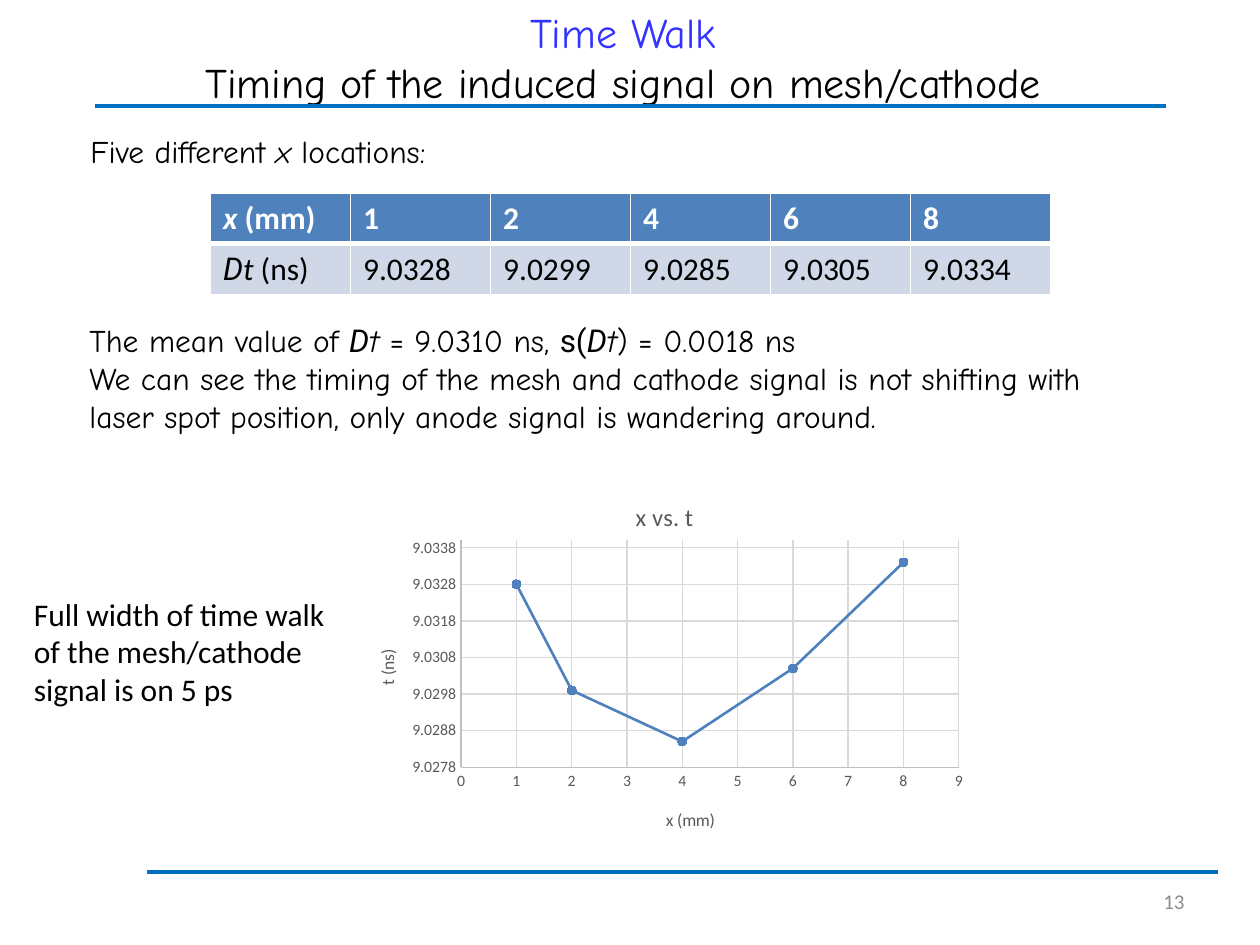
from lxml import etree
from pptx import Presentation
from pptx.chart.data import XyChartData
from pptx.dml.color import RGBColor
from pptx.enum.chart import XL_CHART_TYPE, XL_MARKER_STYLE, XL_TICK_MARK
from pptx.enum.shapes import MSO_CONNECTOR
from pptx.enum.text import MSO_ANCHOR, MSO_AUTO_SIZE, PP_ALIGN
from pptx.oxml.ns import qn
from pptx.util import Inches, Pt

BLACK = RGBColor(0x00, 0x00, 0x00)
WHITE = RGBColor(0xFF, 0xFF, 0xFF)
TITLE_BLUE = RGBColor(0x33, 0x33, 0xFF)
RULE_BLUE = RGBColor(0x00, 0x70, 0xC0)
DATA_BLUE = RGBColor(0x4F, 0x81, 0xBD)
ROW_TINT = RGBColor(0xD0, 0xD8, 0xE8)
PAGE_GRAY = RGBColor(0x8C, 0x8C, 0x8C)
CHART_TEXT = RGBColor(0x59, 0x59, 0x59)
AXIS_GRAY = RGBColor(0xBF, 0xBF, 0xBF)
GRID_GRAY = RGBColor(0xD9, 0xD9, 0xD9)

LEFT, CENTER, RIGHT = PP_ALIGN.LEFT, PP_ALIGN.CENTER, PP_ALIGN.RIGHT
TOP, MIDDLE = MSO_ANCHOR.TOP, MSO_ANCHOR.MIDDLE
GROW, FIXED = MSO_AUTO_SIZE.SHAPE_TO_FIT_TEXT, MSO_AUTO_SIZE.NONE
STRAIGHT = MSO_CONNECTOR.STRAIGHT
NO_TICK = XL_TICK_MARK.NONE
SCATTER = XL_CHART_TYPE.XY_SCATTER_LINES
CIRCLE = XL_MARKER_STYLE.CIRCLE

COMIC, CALIBRI, ROBOTO = "Comic Neue", "Calibri", "Roboto"
ITALIC = {"italic": True}
SYMBOL = {"name": ROBOTO}
SLANTED_SYMBOL = {"name": ROBOTO, "italic": True}

POSITIONS = [1, 2, 4, 6, 8]
TIMES = [9.0328, 9.0299, 9.0285, 9.0305, 9.0334]


def format_font(font, color=BLACK, **values):
    for attribute, value in values.items():
        setattr(font, attribute, value)
    font.color.rgb = color


def format_line(line, color, width):
    line.color.rgb = color
    line.width = Pt(width)


def place(shape, left, top, width, height):
    shape.left, shape.top = Inches(left), Inches(top)
    shape.width, shape.height = Inches(width), Inches(height)


def set_layout(parent, index, target=None, **fractions):
    """Fix a chart part at fractions of the chart's width and height."""
    for old in parent.findall(qn("c:layout")):
        parent.remove(old)
    layout = etree.Element(qn("c:layout"))
    manual = etree.SubElement(layout, qn("c:manualLayout"))
    if target:
        etree.SubElement(manual, qn("c:layoutTarget"), val=target)
    for mode in ("xMode", "yMode"):
        etree.SubElement(manual, qn(f"c:{mode}"), val="edge")
    for key, value in fractions.items():
        etree.SubElement(manual, qn(f"c:{key}"), val=str(value))
    parent.insert(index, layout)


def set_borders(cell, **widths):
    """Draw white cell borders, given in points for sides L, R, T and B."""
    properties = cell._tc.get_or_add_tcPr()
    for index, (side, width) in enumerate(widths.items()):
        border = etree.Element(qn(f"a:ln{side}"), w=str(Pt(width)))
        fill = etree.SubElement(border, qn("a:solidFill"))
        etree.SubElement(fill, qn("a:srgbClr"), val=str(WHITE))
        properties.insert(index, border)


class SlideBuilder:
    def __init__(self, slide, font=COMIC, size=18):
        self.slide = slide
        self.style = {"name": font, "size": Pt(size)}

    def fill_frame(self, frame, paragraphs, align=LEFT, anchor=TOP,
                   auto_size=GROW, **style):
        """Fill a frame; each paragraph is a list of (text, format) runs."""
        frame.word_wrap = True
        frame.auto_size = auto_size
        frame.vertical_anchor = anchor
        for index, runs in enumerate(paragraphs):
            paragraph = frame.add_paragraph() if index else frame.paragraphs[0]
            paragraph.alignment = align
            paragraph.space_before = Pt(0)
            self.add_runs(paragraph, runs, **style)

    def add_runs(self, paragraph, runs, **style):
        for text, changes in runs:
            run = paragraph.add_run()
            run.text = text
            format_font(run.font, **{**self.style, **style, **changes})

    def title(self, box, paragraphs, **options):
        heading = self.slide.shapes.title
        place(heading, *box)
        self.fill_frame(heading.text_frame, paragraphs, align=CENTER, **options)

    def body(self, box, paragraphs):
        body = self.slide.placeholders[1]
        place(body, *box)
        self.fill_frame(body.text_frame, paragraphs)
        for paragraph in body.text_frame.paragraphs:
            properties = paragraph._p.get_or_add_pPr()
            properties.set("marL", "0")
            properties.set("indent", "0")
            etree.SubElement(properties, qn("a:buNone"))

    def text(self, box, paragraphs, **options):
        label = self.slide.shapes.add_textbox(*map(Inches, box))
        self.fill_frame(label.text_frame, paragraphs, **options)

    def rule(self, left, top, width):
        rule = self.slide.shapes.add_connector(
            STRAIGHT, Inches(left), Inches(top), Inches(left + width), Inches(top))
        format_line(rule.line, RULE_BLUE, 2)
        etree.SubElement(rule._element.spPr, qn("a:effectLst"))

    def table(self, box, rows):
        table = self.slide.shapes.add_table(
            len(rows), len(rows[0]), *map(Inches, box)).table
        for r, row in enumerate(rows):
            header = r == 0
            for c, runs in enumerate(row):
                cell = table.cell(r, c)
                cell.fill.solid()
                cell.fill.fore_color.rgb = DATA_BLUE if header else ROW_TINT
                set_borders(cell, L=1, R=1, T=1 if header else 3, B=3 if header else 1)
                self.add_runs(cell.text_frame.paragraphs[0], runs, name=CALIBRI,
                              bold=header, color=WHITE if header else BLACK)

    def chart_title(self, owner, holder, text, size, x, y):
        """Title a chart or an axis; holder names the title's attribute."""
        title = getattr(owner, holder)
        paragraph = title.text_frame.paragraphs[0]
        self.add_runs(paragraph, [(text, {})], name=CALIBRI, size=Pt(size),
                      bold=False, color=CHART_TEXT)
        set_layout(title._element, 1, x=x, y=y)

    def axis(self, axis, title, title_at, number_format, **scale):
        values = {"major_tick_mark": NO_TICK, "minor_tick_mark": NO_TICK,
                  "has_major_gridlines": True, **scale}
        for attribute, value in values.items():
            setattr(axis, attribute, value)
        labels = axis.tick_labels
        labels.number_format = number_format
        labels.number_format_is_linked = False
        format_font(labels.font, CHART_TEXT, name=CALIBRI, size=Pt(9))
        format_line(axis.format.line, AXIS_GRAY, 0.75)
        format_line(axis.major_gridlines.format.line, GRID_GRAY, 0.75)
        self.chart_title(axis, "axis_title", title, 10, *title_at)

    def scatter(self, box, name, points):
        data = XyChartData()
        series_data = data.add_series(name)
        for x, y in points:
            series_data.add_data_point(x, y)
        chart = self.slide.shapes.add_chart(SCATTER, *map(Inches, box), data).chart
        chart.has_legend = False
        format_font(chart.font, name=CALIBRI, size=Pt(10))
        chart.plots[0].vary_by_categories = False
        self.chart_title(chart, "chart_title", name, 14, 0.45, 0.06)
        self.axis(chart.category_axis, "x (mm)", (0.5, 0.88), "0",
                  minimum_scale=0, maximum_scale=9, major_unit=1)
        self.axis(chart.value_axis, "t (ns)", (0.04, 0.46), "0.0000",
                  minimum_scale=9.0278, maximum_scale=9.034, major_unit=0.001)
        set_layout(chart._chartSpace.chart.plotArea, 0, "inner",
                   x=0.18, y=0.18, w=0.79, h=0.6)
        series = chart.plots[0].series[0]
        series.smooth = False
        format_line(series.format.line, DATA_BLUE, 1.5)
        marker = series.marker
        marker.style, marker.size = CIRCLE, 5
        marker.format.fill.solid()
        marker.format.fill.fore_color.rgb = DATA_BLUE
        format_line(marker.format.line, DATA_BLUE, 0.75)


def main():
    deck = Presentation()
    deck.slide_width, deck.slide_height = Inches(10), Inches(7.5)
    page = SlideBuilder(deck.slides.add_slide(deck.slide_layouts[1]))
    page.rule(1.17, 6.92, 8.5)
    page.rule(0.75, 0.84, 8.5)
    page.title((0.5, 0, 8.89, 0.91), [
        [("Time Walk", {"color": TITLE_BLUE})],
        [("Timing of the induced signal on mesh/cathode", {})],
    ], size=Pt(24))
    page.text((0.62, 1, 8.64, 0.4), [
        [("Five different ", {}), ("x", ITALIC), (" locations:", {})]])
    page.table((1.67, 1.53, 6.67, 0.81), [
        [[("x", ITALIC), (" (mm)", {})]] + [[(str(x), {})] for x in POSITIONS],
        [[("D", SLANTED_SYMBOL), ("t", ITALIC), (" (ns)", {})]]
        + [[(f"{t:.4f}", {})] for t in TIMES],
    ])
    page.body((0.61, 2.5, 8.25, 1.01), [
        [("The mean value of ", {}), ("D", SLANTED_SYMBOL), ("t", ITALIC),
         (" = 9.0310 ns, ", {}), ("s(", SYMBOL), ("D", SLANTED_SYMBOL),
         ("t", ITALIC), (") = 0.0018 ns", {})],
        [("We can see the timing of the mesh and cathode signal is not shifting with "
          "laser spot position, only anode signal is wandering around.", {})],
    ])
    page.scatter((2.76, 3.75, 5, 3), "x vs. t", zip(POSITIONS, TIMES))
    page.text((7.17, 6.95, 2.33, 0.4), [[("13", {})]], align=RIGHT, anchor=MIDDLE,
              auto_size=FIXED, name=CALIBRI, size=Pt(12), color=PAGE_GRAY)
    page.text((0.17, 4.67, 2.75, 1.01), [
        [("Full width of time walk of the mesh/cathode signal is on 5 ps", {})],
    ], name=CALIBRI)
    deck.save("out.pptx")


if __name__ == "__main__":
    main()
